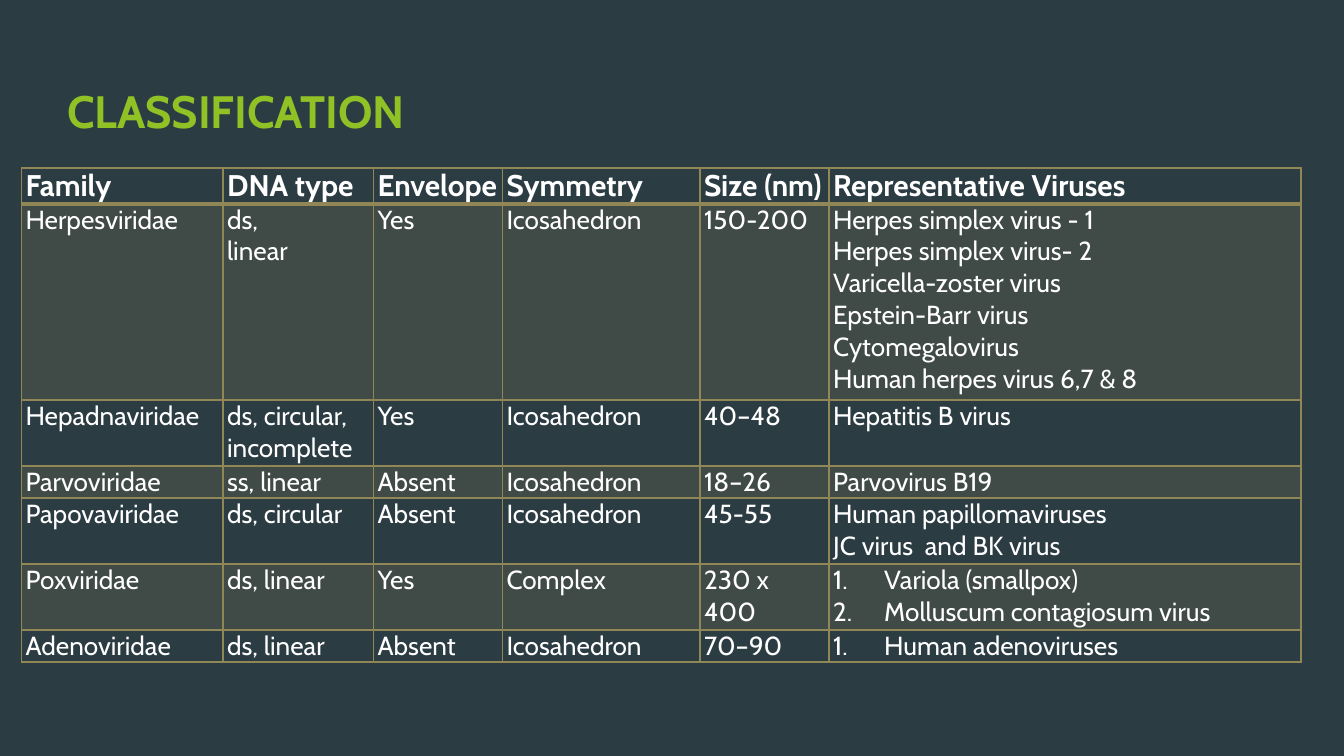
from pptx import Presentation
from pptx.dml.color import RGBColor
from pptx.enum import text
from pptx.oxml import parse_xml
from pptx.oxml.ns import nsdecls
from pptx.util import Inches, Pt

BACK = RGBColor(0x2C, 0x3C, 0x43)
GREEN = RGBColor(0x90, 0xC2, 0x26)
GOLD = RGBColor(0x91, 0x86, 0x55)
WHITE = RGBColor(0xFF, 0xFF, 0xFF)

TITLE = {"name": "Cabin", "size": Pt(24.3), "bold": True}
HEAD = {"name": "Cabin", "size": Pt(16), "bold": True}
BODY = {"name": "Cabin", "size": Pt(14), "bold": False}

COLS = [1.5, 1.12, 0.96, 1.47, 0.96, 3.51]
HIGH = [0.24, 1.46, 0.49, 0.24, 0.49, 0.49, 0.24]
ROWS = [
    ["Family", "DNA type", "Envelope", "Symmetry", "Size (nm)",
     "Representative Viruses"],
    ["Herpesviridae", "ds,\nlinear", "Yes", "Icosahedron", "150-200",
     "Herpes simplex virus - 1\nHerpes simplex virus- 2\n"
     "Varicella-zoster virus\nEpstein-Barr virus\n"
     "Cytomegalovirus\nHuman herpes virus 6,7 & 8"],
    ["Hepadnaviridae", "ds, circular,\nincomplete", "Yes", "Icosahedron",
     "40–48", "Hepatitis B virus"],
    ["Parvoviridae", "ss, linear", "Absent", "Icosahedron", "18–26",
     "Parvovirus B19"],
    ["Papovaviridae", "ds, circular", "Absent", "Icosahedron", "45-55",
     "Human papillomaviruses\nJC virus  and BK virus"],
    ["Poxviridae", "ds, linear", "Yes", "Complex", "230 x 400",
     "Variola (smallpox)\nMolluscum contagiosum virus"],
    ["Adenoviridae", "ds, linear", "Absent", "Icosahedron", "70–90",
     "Human adenoviruses"],
]
NUMBERED = (5, 6)


def style(para, form, color):
    for key, val in form.items():
        setattr(para.font, key, val)
    para.font.color.rgb = color


def edge(cell, row):
    """Draw the four borders, with a heavier rule below the header."""
    props = cell._tc.get_or_add_tcPr()
    for spot, side in enumerate("LRTB"):
        heavy = (row, side) in ((0, "B"), (1, "T"))
        props.insert(spot, parse_xml(
            f'<a:ln{side} {nsdecls("a")} w="{Pt(2 if heavy else 1)}">'
            f'<a:solidFill><a:srgbClr val="{GOLD}"/></a:solidFill>'
            f'</a:ln{side}>'))


prs = Presentation()
prs.slide_width = Inches(10)
prs.slide_height = Inches(10 * 9 / 16)
slide = prs.slides.add_slide(prs.slide_layouts[6])
slide.background.fill.solid()
slide.background.fill.fore_color.rgb = BACK

box = slide.shapes.add_textbox(Inches(0.32), Inches(0.17),
                               Inches(7.05), Inches(1.08))
frame = box.text_frame
frame.word_wrap = True
frame.vertical_anchor = text.MSO_ANCHOR.MIDDLE
frame.margin_left, frame.margin_top = Inches(0.18), Inches(0.27)
frame.text = "CLASSIFICATION"
style(frame.paragraphs[0], TITLE, GREEN)

table = slide.shapes.add_table(len(ROWS), len(COLS), Inches(0.16), Inches(1.25),
                               Inches(sum(COLS)), Inches(sum(HIGH))).table
table.first_row = table.horz_banding = False
for col, wide in zip(table.columns, COLS):
    col.width = Inches(wide)
for row, high in zip(table.rows, HIGH):
    row.height = Inches(high)

for r, line in enumerate(ROWS):
    for c, words in enumerate(line):
        cell = table.cell(r, c)
        cell.margin_left = cell.margin_right = Inches(0.03)
        cell.margin_top = cell.margin_bottom = 0
        if r % 2:
            cell.fill.solid()
            cell.fill.fore_color.rgb = GOLD
            tint = cell._tc.tcPr.find(".//{*}srgbClr")
            tint.append(parse_xml(f'<a:alpha {nsdecls("a")} val="20000"/>'))
        else:
            cell.fill.background()
        edge(cell, r)
        cell.text_frame.text = words
        for para in cell.text_frame.paragraphs:
            if r and c == len(COLS) - 1:
                hang = Inches(0.38 if r in NUMBERED else 0.25)
                props = para._p.get_or_add_pPr()
                props.set("marL", str(hang))
                props.set("indent", str(-hang))
                if r in NUMBERED:
                    props.append(parse_xml(
                        f'<a:buAutoNum {nsdecls("a")} type="arabicPeriod"/>'))
            style(para, BODY if r else HEAD, WHITE)

prs.save("out.pptx")
